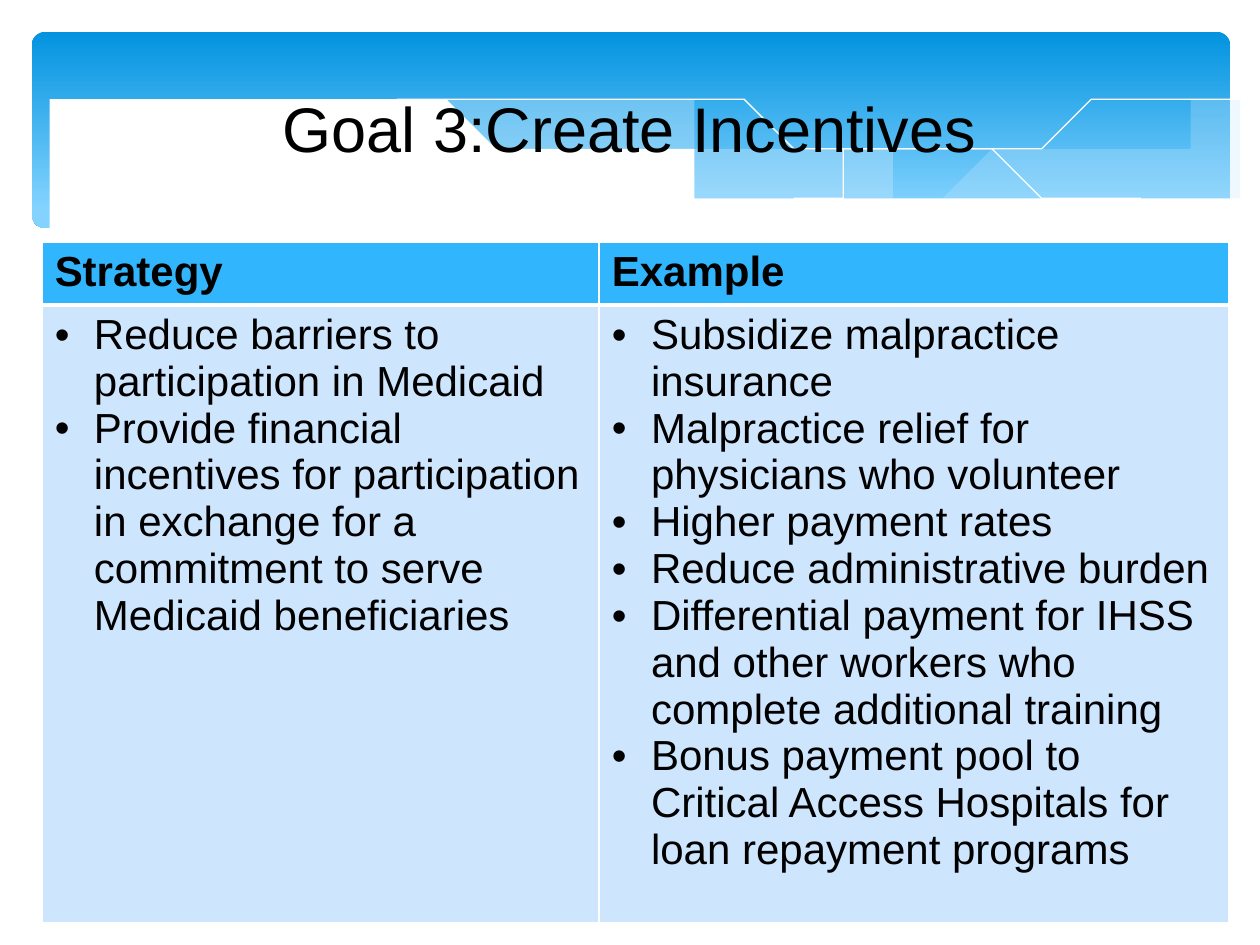
import pptx
import pptx.util
import pptx.dml.color
import pptx.enum.shapes
import pptx.enum.text
import pptx.oxml
import pptx.oxml.ns
from pptx.util import Cm, Pt

COLORS = {
    "deep": "0293E0", "light": "83D3FE", "mist": "C6E7FC", "head": "31B6FD",
    "body": "CEE5FE", "white": "FFFFFF", "black": "000000",
}

# Curve knots in centimetres
RIGHT = [
    [(24.78, 2.39), (22.63, 2.77), (21.87, 3), (19.79, 3.48), (16.79, 4.06)],
    [(16.79, 4.06), (19.23, 4.32), (21.18, 4.37), (22.83, 4.22), (24.1, 3.86),
     (24.78, 3.58)],
]
LONG = [
    [(22.68, 4.24), (20.5, 3.91), (17.93, 3.41), (15.98, 2.95), (14.1, 2.54),
     (12.42, 2.26), (10.67, 2.08), (9.17, 2.03), (7.26, 2.18)],
    [(7.26, 2.18), (9.19, 2.46), (11.4, 2.95), (14.38, 3.63), (16.51, 4.01),
     (18.69, 4.27), (20.5, 4.39), (21.77, 4.34), (22.68, 4.24)],
]
FALL = [(7.85, 2.29), (8.97, 2.13), (10.57, 2.07), (12.42, 2.13), (14.78, 2.39),
        (17.65, 2.9), (20.19, 3.45), (23.04, 4.22)]
RISE = [(15.57, 3.84), (17.65, 3.3), (19.71, 2.82), (22, 2.36), (23.47, 2.13),
        (24.77, 2.03)]
COVER = [
    [(24.82, 3.58), (23.88, 3.91), (22.83, 4.17), (21.59, 4.32), (20.14, 4.34),
     (18.44, 4.24), (16.46, 3.96), (14.1, 3.53), (11.35, 2.9), (9.27, 2.44),
     (7.42, 2.16), (5.84, 2.01), (4.5, 1.98), (3.35, 2.05), (2.16, 2.21),
     (1.32, 2.44), (0.58, 2.72)],
    [(0.58, 5.69)], [(24.82, 5.69)],
]

HEADS = ["Strategy", "Example"]
LISTS = [
    ["Reduce barriers to participation in Medicaid",
     "Provide financial incentives for participation in exchange for a "
     "commitment to serve Medicaid beneficiaries"],
    ["Subsidize malpractice insurance",
     "Malpractice relief for physicians who volunteer",
     "Higher payment rates",
     "Reduce administrative burden",
     "Differential payment for IHSS and other workers who complete "
     "additional training",
     "Bonus payment pool to Critical Access Hospitals for loan repayment "
     "programs"],
]


def smooth(knots, steps=5):
    """Points of a Catmull-Rom curve through the knots."""
    pad = [knots[0], *knots, knots[-1]]
    points = [knots[0]]
    for a, b, c, d in zip(pad, pad[1:], pad[2:], pad[3:]):
        for step in range(1, steps + 1):
            t = step / steps
            points.append(tuple(
                (2 * q + (r - p) * t + (2 * p - 5 * q + 4 * r - s) * t ** 2
                 + (3 * q - p - 3 * r + s) * t ** 3) / 2
                for p, q, r, s in zip(a, b, c, d)))
    return points


def child(parent, tag, **attrs):
    node = pptx.oxml.ns.qn(tag)
    item = parent.makeelement(node, attrs)
    parent.append(item)
    return item


class Deck:
    """Holds the style and the current slide."""

    font = "Arial"

    def __init__(self, slide):
        self.slide = slide
        self.shapes = slide.shapes

    def color(self, name):
        return pptx.dml.color.RGBColor.from_string(COLORS[name])

    def paint(self, fill, name):
        fill.solid()
        fill.fore_color.rgb = self.color(name)

    def style(self, para, size, bold=False):
        for run in para.runs:
            run.font.name = self.font
            run.font.size = Pt(size)
            run.font.bold = bold
            run.font.color.rgb = self.color("black")

    def band(self, left, top, width, height):
        shape = self.shapes.add_shape(
            pptx.enum.shapes.MSO_SHAPE.ROUNDED_RECTANGLE,
            Cm(left), Cm(top), Cm(width), Cm(height))
        shape.adjustments[0] = 0.07
        shape.shadow.inherit = False
        shape.line.fill.background()
        shape.fill.gradient()
        shape.fill.gradient_angle = 270
        stops = shape.fill.gradient_stops
        for stop, name, place in zip(stops, ("deep", "light"), (0, 0.9)):
            stop.color.rgb = self.color(name)
            stop.position = place

    def curve(self, parts, close):
        points = [point for part in parts for point in smooth(part)]
        build = self.shapes.build_freeform(*points[0], scale=Cm(1))
        build.add_line_segments(points[1:], close=close)
        shape = build.convert_to_shape()
        shape.shadow.inherit = False
        return shape

    def wave(self, parts, name, alpha=100):
        shape = self.curve(parts, True)
        shape.line.fill.background()
        self.paint(shape.fill, name)
        if alpha < 100:
            tint = shape.fill._xPr.find(".//" + pptx.oxml.ns.qn("a:srgbClr"))
            child(tint, "a:alpha", val=str(alpha * 1000))

    def thread(self, knots):
        shape = self.curve([knots], False)
        shape.fill.background()
        shape.line.color.rgb = self.color("white")
        shape.line.width = Pt(0)

    def title(self, text, left, top, width, height):
        frame = self.shapes.add_textbox(
            Cm(left), Cm(top), Cm(width), Cm(height)).text_frame
        frame.word_wrap = True
        frame.vertical_anchor = pptx.enum.text.MSO_ANCHOR.BOTTOM
        frame.margin_bottom = Cm(0.15)
        frame.text = text
        para = frame.paragraphs[0]
        para.alignment = pptx.enum.text.PP_ALIGN.CENTER
        self.style(para, 36)

    def bullet(self, para):
        props = para._p.get_or_add_pPr()
        props.set("marL", str(Cm(0.79)))
        props.set("indent", str(-Cm(0.79)))
        child(props, "a:buFont", typeface=self.font)
        child(props, "a:buChar", char="•")

    def border(self, cell, **widths):
        props = cell._tc.get_or_add_tcPr()
        for side in "LRTB":
            line = child(props, "a:ln" + side, w=str(Pt(widths.get(side, 1))))
            fill = child(line, "a:solidFill")
            child(fill, "a:srgbClr", val=COLORS["white"])

    def cell(self, cell, lines, name, head):
        cell.text_frame.text = "\n".join(lines)
        for para in cell.text_frame.paragraphs:
            self.style(para, 24, head)
            if not head:
                self.bullet(para)
        self.border(cell, **({"B": 3} if head else {"T": 3}))
        self.paint(cell.fill, name)

    def table(self, left, top, widths, heights):
        table = self.shapes.add_table(
            len(heights), len(widths), Cm(left), Cm(top),
            Cm(sum(widths)), Cm(sum(heights))).table
        for row, height in zip(table.rows, heights):
            row.height = Cm(height)
        for i, width in enumerate(widths):
            table.columns[i].width = Cm(width)
            self.cell(table.cell(0, i), [HEADS[i]], "head", True)
            self.cell(table.cell(1, i), LISTS[i], "body", False)


def main():
    show = pptx.Presentation()
    show.slide_width, show.slide_height = Cm(25.4), Cm(19.05)
    deck = Deck(show.slides.add_slide(show.slide_layouts[6]))
    deck.band(0.64, 0.64, 24.16, 3.96)
    deck.wave(RIGHT, "mist", 29)
    deck.wave(LONG, "mist", 40)
    deck.thread(FALL)
    deck.thread(RISE)
    deck.wave(COVER, "white")
    deck.title("Goal 3:Create Incentives", 0.84, 0, 23.7, 3.48)
    deck.table(0.85, 4.88, [11.23, 12.7], [1.19, 11.58])
    show.save("out.pptx")


if __name__ == "__main__":
    main()
